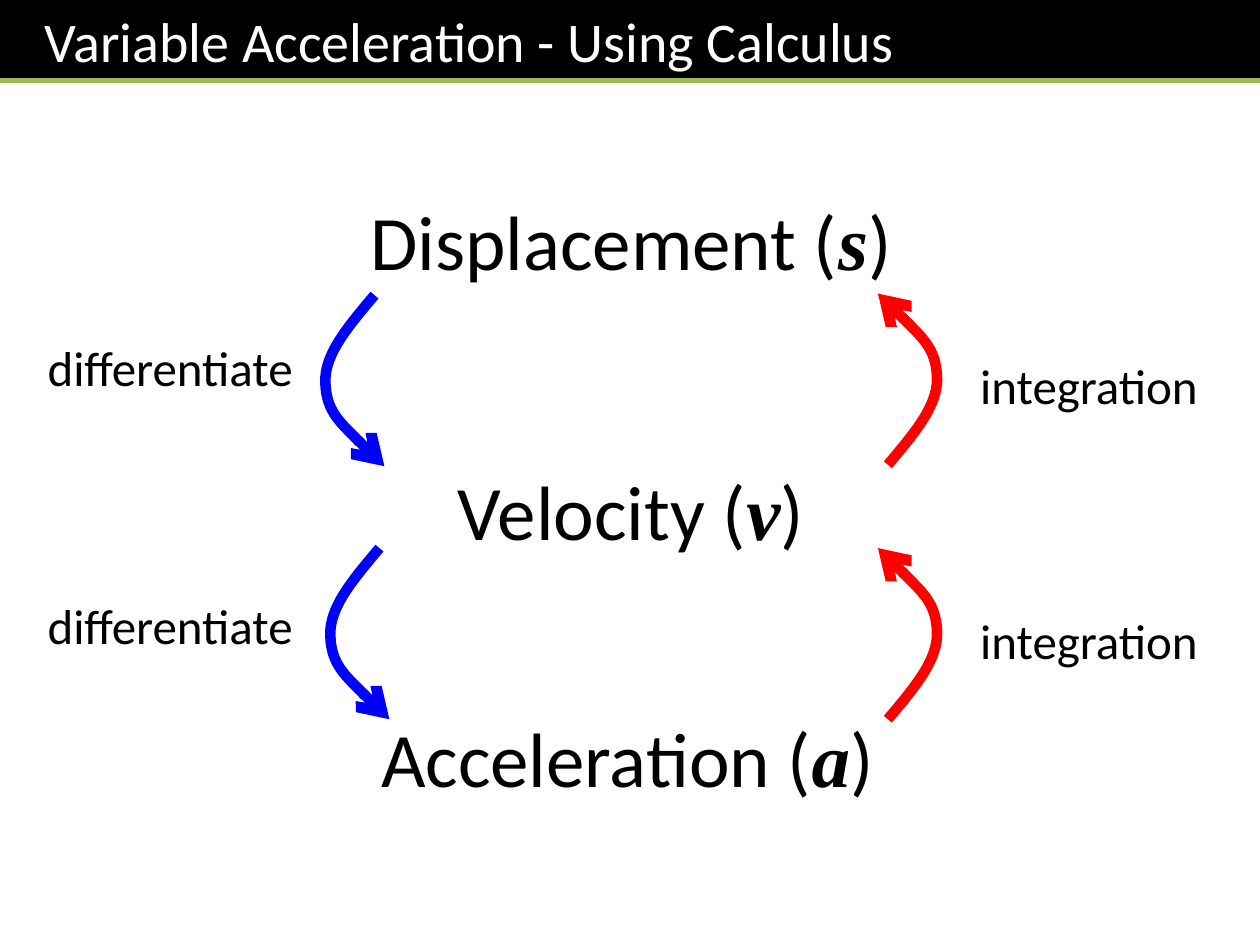
from lxml import etree
from pptx import Presentation
from pptx.dml.color import RGBColor
from pptx.enum import shapes, text
from pptx.oxml import ns
from pptx.util import Cm, Pt

BLACK = RGBColor(0x00, 0x00, 0x00)
WHITE = RGBColor(0xFF, 0xFF, 0xFF)
GREEN = RGBColor(0x9B, 0xBB, 0x59)
RED = RGBColor(0xFF, 0x00, 0x00)
BLUE = RGBColor(0x00, 0x00, 0xFF)

WIDTH, HEIGHT, BAR_HEIGHT = 25.4, 19.05, 1.63
CURVE = [(0.58, 0.56), (1.17, 1.09), (1.19, 1.68),
         (1.22, 2.26), (0.71, 2.84), (0.2, 3.45)]
QUANTITIES = [
    ("Displacement", "s", 7.09, 3.78, 11.61),
    ("Velocity", "v", 7.7, 9.22, 10.39),
    ("Acceleration", "a", 7.42, 14.2, 10.8),
]
LABELS = [
    ("differentiate", 0.71, 6.68, 5.59),
    ("differentiate", 0.71, 11.89, 5.59),
    ("integration", 19.51, 7.04, 5.21),
    ("integration", 19.51, 12.19, 5.0),
]
ARROWS = [
    (17.7, 5.92, 1, RED),
    (17.7, 11.05, 1, RED),
    (7.75, 9.4, -1, BLUE),
    (7.85, 14.5, -1, BLUE),
]


def add_title(slide, wording):
    """Turn the title placeholder into the black bar with its green rule."""
    title = slide.shapes.title
    title.left, title.top = Cm(0), Cm(0)
    title.width, title.height = Cm(WIDTH), Cm(BAR_HEIGHT)
    title.fill.solid()
    title.fill.fore_color.rgb = BLACK
    frame = title.text_frame
    frame.text = wording
    frame.auto_size = text.MSO_AUTO_SIZE.NONE
    frame.margin_left = Cm(0.9)
    frame.vertical_anchor = text.MSO_ANCHOR.MIDDLE
    paragraph = frame.paragraphs[0]
    paragraph.alignment = text.PP_ALIGN.LEFT
    paragraph.font.name, paragraph.font.size = "Calibri", Pt(32)
    paragraph.font.color.rgb = WHITE

    rule = slide.shapes.add_connector(
        shapes.MSO_CONNECTOR.STRAIGHT,
        Cm(0), Cm(BAR_HEIGHT), Cm(WIDTH), Cm(BAR_HEIGHT))
    rule.line.color.rgb, rule.line.width = GREEN, Pt(3)
    etree.SubElement(rule._element.spPr, ns.qn("a:effectLst"))


def add_text(slide, left, top, width, height, size):
    """Add an empty text box and return its formatted paragraph."""
    box = slide.shapes.add_textbox(Cm(left), Cm(top), Cm(width), Cm(height))
    box.text_frame.word_wrap = False
    paragraph = box.text_frame.paragraphs[0]
    paragraph.font.name, paragraph.font.size = "Calibri", Pt(size)
    paragraph.font.color.rgb = BLACK
    return paragraph


def add_quantity(slide, name, symbol, left, top, width):
    """Add a centred quantity with its symbol in bold italics."""
    paragraph = add_text(slide, left, top, width, 2.13, 44)
    paragraph.alignment = text.PP_ALIGN.CENTER
    paragraph.add_run().text = f"{name} ("
    variable = paragraph.add_run()
    variable.text = symbol
    variable.font.name = "Times New Roman"
    variable.font.bold = variable.font.italic = True
    paragraph.add_run().text = ") "


def add_label(slide, wording, left, top, width):
    """Add the name of an operation."""
    add_text(slide, left, top, width, 1.45, 28).add_run().text = wording


def add_curved_arrow(slide, x, y, direction, color):
    """Draw a Bézier arrow with its tip at x, y; direction -1 turns it round."""
    builder = slide.shapes.build_freeform(Cm(x), Cm(y))
    builder.add_line_segments(
        [(Cm(x + direction * dx), Cm(y + direction * dy)) for dx, dy in CURVE],
        close=False)
    arrow = builder.convert_to_shape()
    arrow.shadow.inherit = False
    arrow.fill.background()
    arrow.line.color.rgb, arrow.line.width = color, Pt(6)

    segments = list(arrow._element.iter(ns.qn("a:lnTo")))
    outline = segments[0].getparent()
    for start in range(0, len(segments), 3):
        curve = etree.SubElement(outline, ns.qn("a:cubicBezTo"))
        for segment in segments[start:start + 3]:
            curve.append(segment[0])
            outline.remove(segment)
    etree.SubElement(arrow.line._get_or_add_ln(), ns.qn("a:headEnd"), type="arrow")


def main():
    """Build and save the slide."""
    presentation = Presentation()
    presentation.slide_width, presentation.slide_height = Cm(WIDTH), Cm(HEIGHT)
    slide = presentation.slides.add_slide(presentation.slide_layouts[5])
    add_title(slide, "Variable Acceleration - Using Calculus")
    for arrow in ARROWS:
        add_curved_arrow(slide, *arrow)
    for quantity in QUANTITIES:
        add_quantity(slide, *quantity)
    for label in LABELS:
        add_label(slide, *label)
    presentation.save("out.pptx")


if __name__ == "__main__":
    main()
